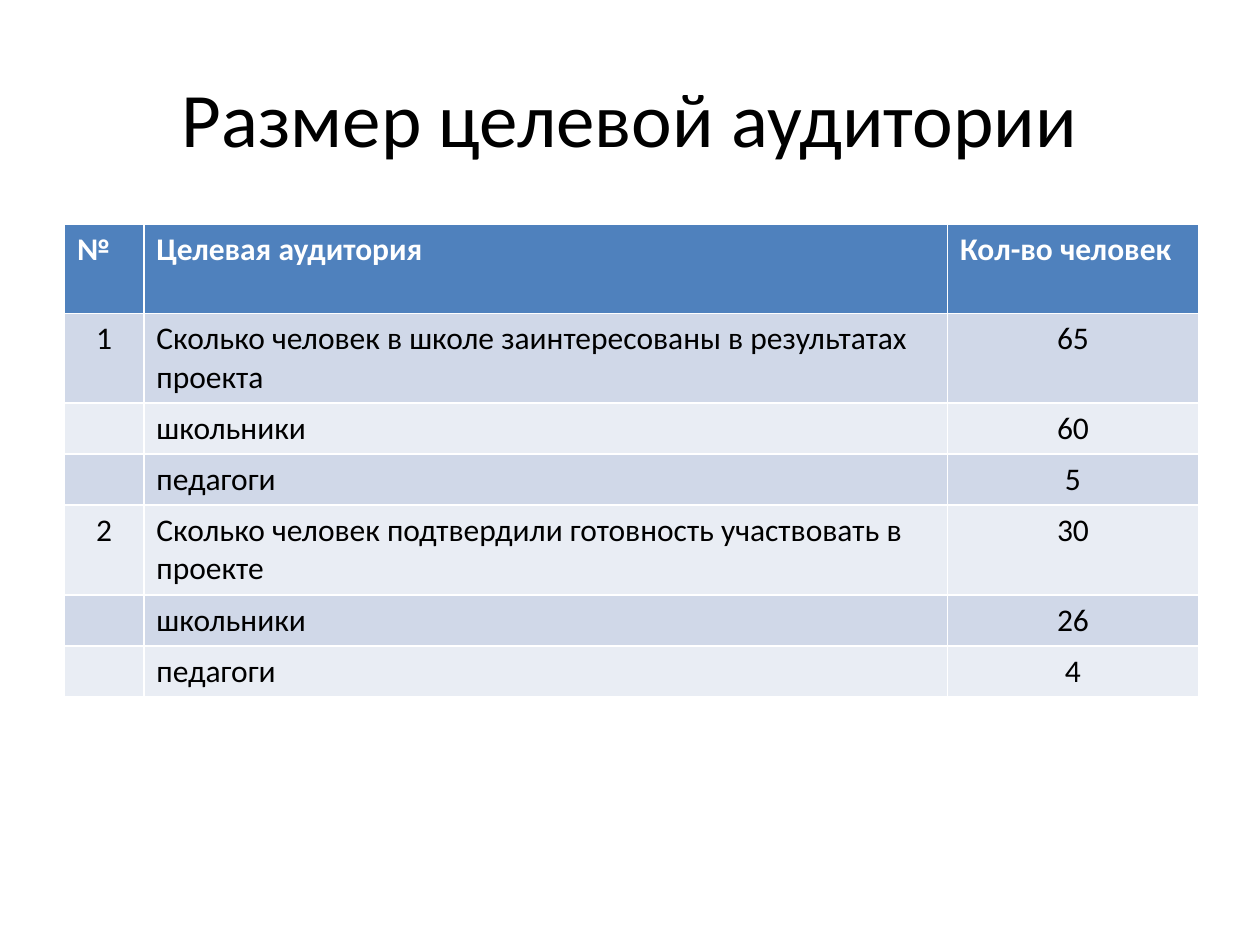
from pptx import Presentation
from pptx.dml.color import RGBColor
from pptx.enum.text import MSO_ANCHOR, PP_ALIGN
from pptx.util import Cm, Pt

COLORS = {
    "header": "4F81BD",
    "odd_row": "D0D8E8",
    "even_row": "E9EDF4",
    "light_text": "FFFFFF",
    "dark_text": "000000",
}
TITLE_FONT = {"name": "Calibri", "size": Pt(44), "bold": False}
HEADER_FONT = {"name": "Calibri", "size": Pt(18), "bold": True}
BODY_FONT = {**HEADER_FONT, "bold": False}

AUDIENCE = [
    ("№", "Целевая аудитория", "Кол-во человек"),
    ("1", "Сколько человек в школе заинтересованы в результатах проекта", "65"),
    ("", "школьники", "60"),
    ("", "педагоги", "5"),
    ("2", "Сколько человек подтвердили готовность участвовать в проекте", "30"),
    ("", "школьники", "26"),
    ("", "педагоги", "4"),
]
COLUMN_WIDTHS = [Cm(1.6), Cm(16.2), Cm(5.06)]
COLUMN_ALIGNMENTS = [PP_ALIGN.CENTER, PP_ALIGN.LEFT, PP_ALIGN.CENTER]
HEADER_HEIGHT = Cm(1.8)
ROW_HEIGHT = Cm(1.03)


def color(key):
    return RGBColor.from_string(COLORS[key])


def format_font(font, values, color_key):
    for attribute, value in values.items():
        setattr(font, attribute, value)
    font.color.rgb = color(color_key)


def place_title(slide, left, top, width, height):
    heading = slide.shapes.title
    box = {"left": left, "top": top, "width": width, "height": height}
    for attribute, value in box.items():
        setattr(heading, attribute, value)
    heading.text_frame.vertical_anchor = MSO_ANCHOR.MIDDLE
    paragraph = heading.text_frame.paragraphs[0]
    paragraph.text = "Размер целевой аудитории"
    paragraph.alignment = PP_ALIGN.CENTER
    format_font(paragraph.font, TITLE_FONT, "dark_text")


def fill_cell(cell, wording, alignment, font_values, text_color, fill_color):
    cell.fill.solid()
    cell.fill.fore_color.rgb = color(fill_color)
    paragraph = cell.text_frame.paragraphs[0]
    paragraph.text = wording
    paragraph.alignment = alignment
    format_font(paragraph.font, font_values, text_color)
    for run in paragraph.runs:
        format_font(run.font, font_values, text_color)


def place_audience_table(slide, left, top, width, height):
    audience = slide.shapes.add_table(
        len(AUDIENCE), len(COLUMN_WIDTHS), left, top, width, height
    ).table
    for column, column_width in zip(audience.columns, COLUMN_WIDTHS):
        column.width = column_width
    for index, entries in enumerate(AUDIENCE):
        is_header = index == 0
        audience.rows[index].height = HEADER_HEIGHT if is_header else ROW_HEIGHT
        band = "odd_row" if index % 2 else "even_row"
        for position, wording in enumerate(entries):
            cell = audience.cell(index, position)
            if is_header:
                fill_cell(cell, wording, PP_ALIGN.LEFT,
                          HEADER_FONT, "light_text", "header")
            else:
                fill_cell(cell, wording, COLUMN_ALIGNMENTS[position],
                          BODY_FONT, "dark_text", band)


def main():
    presentation = Presentation()
    presentation.slide_width = Cm(25.4)
    presentation.slide_height = Cm(19.05)
    slide = presentation.slides.add_slide(presentation.slide_layouts[5])
    place_title(slide, Cm(1.27), Cm(0.76), Cm(22.86), Cm(3.18))
    place_audience_table(slide, Cm(1.3), Cm(4.52), Cm(22.86), Cm(9.47))
    presentation.save("out.pptx")


if __name__ == "__main__":
    main()
